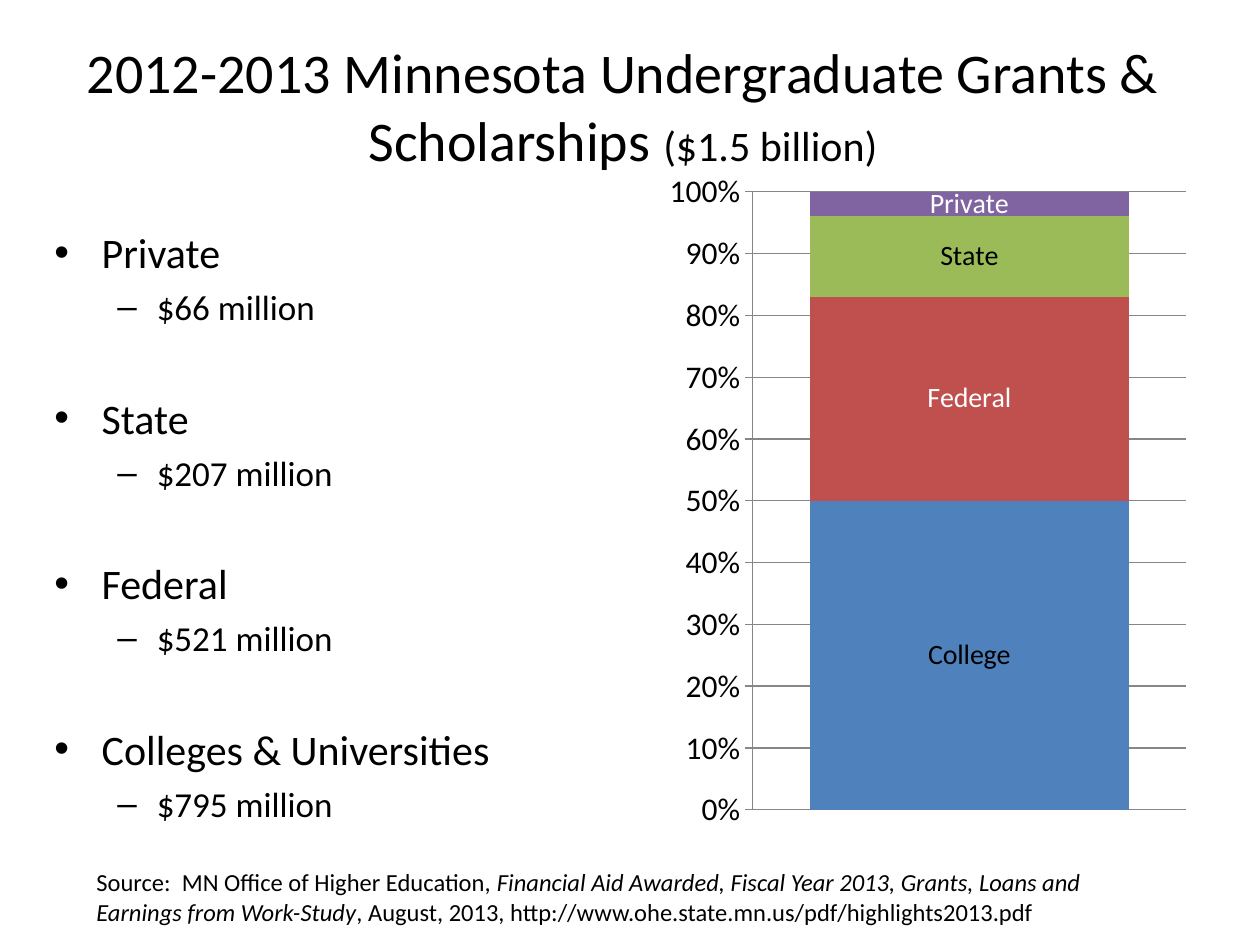
from dataclasses import dataclass
from typing import Any

from lxml import etree
from pptx import Presentation
from pptx import util as u
from pptx.chart import data as chart_data
from pptx.dml import color
from pptx.enum import chart as charts, text
from pptx.oxml import ns

Pt = u.Pt

AMOUNTS = [
    ("Private", "$66 million"),
    ("State", "$207 million"),
    ("Federal", "$521 million"),
    ("Colleges & Universities", "$795 million"),
]
# series name, share in percent, fill, label, label colour
SHARES = [
    ("Colleges", 50, "4F81BD", "College", "000000"),
    ("Federal", 33, "C0504D", "Federal", "FFFFFF"),
    ("State", 13, "9BBB59", "State", "000000"),
    ("Private", 4, "8064A2", "Private", "FFFFFF"),
]


def rgb(value):
    return color.RGBColor.from_string(value)


def write(para, words, font="Calibri", size=14, ink="000000", italic=False):
    """Add one formatted run to a paragraph."""
    span = para.add_run()
    span.text = words
    span.font.name = font
    span.font.size = Pt(size)
    span.font.color.rgb = rgb(ink)
    span.font.italic = italic


def set_bullet(para, mark, left, hanging):
    props = para._p.get_or_add_pPr()
    props.set("marL", str(Pt(left)))
    props.set("indent", str(-Pt(hanging)))
    etree.SubElement(props, ns.qn("a:buFont"), typeface="Arial")
    etree.SubElement(props, ns.qn("a:buChar"), char=mark)


def place_plot(chart, **fractions):
    """Fix the inner plot area as fractions (x, y, w, h) of the chart."""
    plot_area = chart._chartSpace.chart.plotArea
    for old in plot_area.findall(ns.qn("c:layout")):
        plot_area.remove(old)
    layout = etree.Element(ns.qn("c:layout"))
    plot_area.insert(0, layout)
    manual = etree.SubElement(layout, ns.qn("c:manualLayout"))
    settings = {"layoutTarget": "inner", "xMode": "edge", "yMode": "edge", **fractions}
    for name, value in settings.items():
        etree.SubElement(manual, ns.qn("c:" + name), val=str(value))


@dataclass
class Builder:
    page: Any
    font: str = "Calibri"
    ink: str = "000000"
    grid: str = "868686"

    def text_box(self, left, top, width, height, anchor=text.MSO_ANCHOR.TOP):
        box = self.page.shapes.add_textbox(Pt(left), Pt(top), Pt(width), Pt(height))
        frame = box.text_frame
        frame.word_wrap = True
        frame.vertical_anchor = anchor
        return frame

    def line(self, frame, spans, align=text.PP_ALIGN.LEFT):
        """Fill the first paragraph with (words, format) pairs."""
        para = frame.paragraphs[0]
        para.alignment = align
        for words, style in spans:
            write(para, words, font=self.font, ink=self.ink, **style)

    def outline(self, frame, groups):
        """List each heading with its detail on a second level."""
        for index, (heading, detail) in enumerate(groups):
            para = frame.add_paragraph() if index else frame.paragraphs[0]
            para.space_before = Pt(37 if index else 0)
            set_bullet(para, "•", 27, 27)
            write(para, heading, font=self.font, size=24, ink=self.ink)
            para = frame.add_paragraph()
            para.level = 1
            para.space_before = Pt(4.8)
            set_bullet(para, "–", 58.5, 22.5)
            write(para, detail, font=self.font, size=20, ink=self.ink)

    def stacked_chart(self, left, top, width, height, shares):
        data = chart_data.CategoryChartData(number_format="0")
        data.categories = ["1"]
        for name, value, *_ in shares:
            data.add_series(name, [value])
        chart = self.page.shapes.add_chart(
            charts.XL_CHART_TYPE.COLUMN_STACKED_100,
            Pt(left), Pt(top), Pt(width), Pt(height), data).chart
        chart.has_legend = False
        chart.has_title = False
        chart.font.name = self.font
        chart.font.size = Pt(18)
        chart.font.color.rgb = rgb(self.ink)
        place_plot(chart, x=0.17, y=0.05, w=0.81, h=0.9)

        chart.category_axis.visible = False
        axis = chart.value_axis
        axis.minimum_scale, axis.maximum_scale, axis.major_unit = 0, 1, 0.1
        axis.major_tick_mark = charts.XL_TICK_MARK.OUTSIDE
        axis.tick_labels.number_format = "0%"
        axis.tick_labels.number_format_is_linked = False
        axis.has_major_gridlines = True
        for rule in (axis.format.line, axis.major_gridlines.format.line):
            rule.color.rgb = rgb(self.grid)
            rule.width = Pt(0.75)

        plot = chart.plots[0]
        plot.gap_width = 36
        plot.overlap = 100
        plot.vary_by_categories = False
        for series, (_, _, fill, label, ink) in zip(plot.series, shares):
            series.format.fill.solid()
            series.format.fill.fore_color.rgb = rgb(fill)
            tag = series.points[0].data_label
            write(tag.text_frame.paragraphs[0], label, font=self.font, size=16, ink=ink)
            tag.position = charts.XL_LABEL_POSITION.CENTER


def main():
    deck = Presentation()
    deck.slide_width, deck.slide_height = Pt(720), Pt(540)
    build = Builder(deck.slides.add_slide(deck.slide_layouts[6]))

    build.stacked_chart(378, 90, 306, 392.4, SHARES)
    build.outline(build.text_box(24, 126, 360, 356.4), AMOUNTS)
    build.line(
        build.text_box(12, 36, 688, 48, text.MSO_ANCHOR.MIDDLE),
        [("2012-2013 Minnesota Undergraduate Grants & Scholarships ", {"size": 32}),
         ("($1.5 billion)", {"size": 24})],
        text.PP_ALIGN.CENTER)
    build.line(
        build.text_box(48, 492, 588, 41),
        [("Source:  MN Office of Higher Education, ", {}),
         ("Financial Aid Awarded, Fiscal Year 2013, Grants, Loans and "
          "Earnings from Work-Study", {"italic": True}),
         (", August, 2013, http://www.ohe.state.mn.us/pdf/highlights2013.pdf", {})])
    deck.save("out.pptx")


if __name__ == "__main__":
    main()
